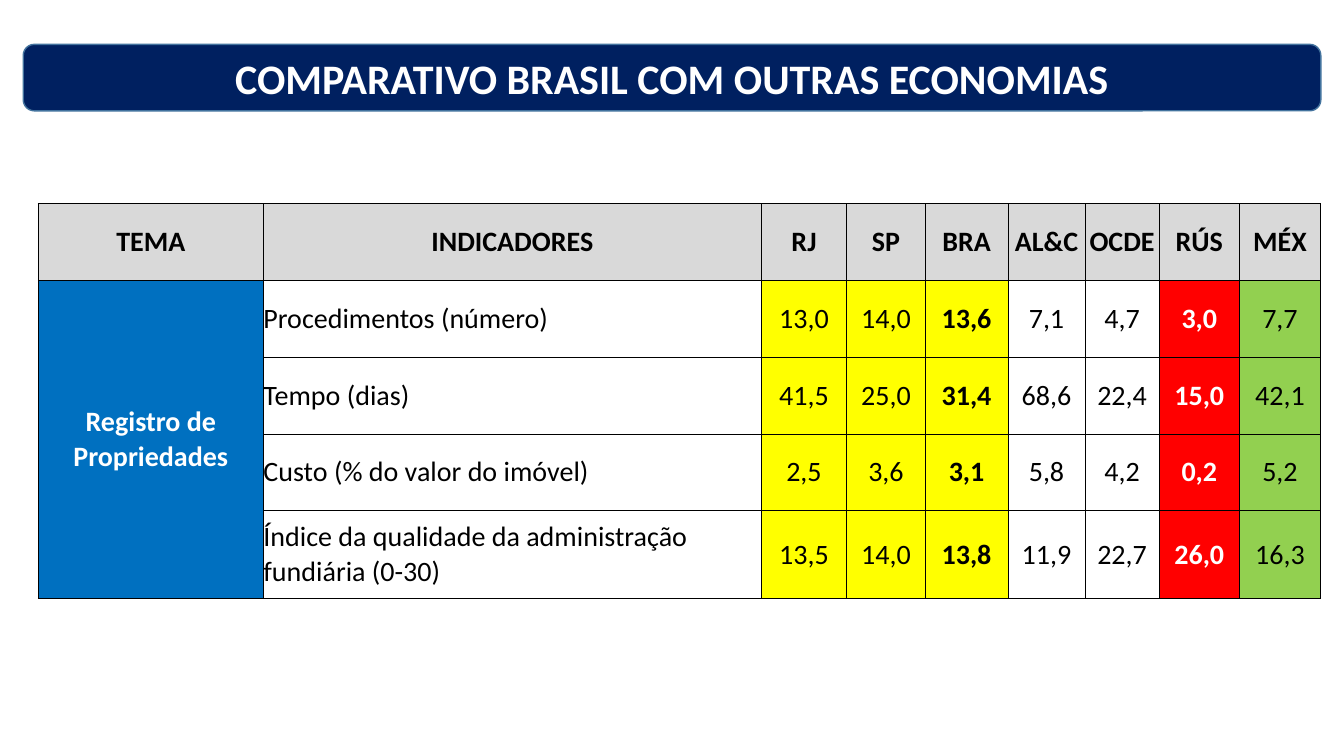
import lxml.etree
import pptx
import pptx.dml.color
import pptx.enum.shapes
import pptx.enum.text
import pptx.oxml.ns
import pptx.util

RGBColor = pptx.dml.color.RGBColor
ALIGN = pptx.enum.text.PP_ALIGN
MIDDLE = pptx.enum.text.MSO_ANCHOR.MIDDLE

BLACK = RGBColor(0x00, 0x00, 0x00)
WHITE = RGBColor(0xFF, 0xFF, 0xFF)
NAVY = RGBColor(0x00, 0x20, 0x60)
STEEL = RGBColor(0x43, 0x73, 0x9E)
GRAY = RGBColor(0xD9, 0xD9, 0xD9)
BLUE = RGBColor(0x00, 0x70, 0xC0)
YELLOW = RGBColor(0xFF, 0xFF, 0x00)
RED = RGBColor(0xFF, 0x00, 0x00)
GREEN = RGBColor(0x92, 0xD0, 0x50)

TITLE = "COMPARATIVO BRASIL COM OUTRAS ECONOMIAS"
THEME = "Registro de Propriedades"
HEADERS = ["TEMA", "INDICADORES", "RJ", "SP", "BRA", "AL&C", "OCDE", "RÚS", "MÉX"]
INDICATORS = [
    ["Procedimentos (número)", "13,0", "14,0", "13,6", "7,1", "4,7", "3,0", "7,7"],
    ["Tempo (dias)", "41,5", "25,0", "31,4", "68,6", "22,4", "15,0", "42,1"],
    ["Custo (% do valor do imóvel)", "2,5", "3,6", "3,1", "5,8", "4,2", "0,2", "5,2"],
    ["Índice da qualidade da administração fundiária (0-30)",
     "13,5", "14,0", "13,8", "11,9", "22,7", "26,0", "16,3"],
]
COLUMN_STYLES = [
    dict(fill=BLUE, color=WHITE, bold=True),
    dict(align=ALIGN.LEFT),
    dict(fill=YELLOW),
    dict(fill=YELLOW),
    dict(fill=YELLOW, bold=True),
    dict(),
    dict(),
    dict(fill=RED, color=WHITE, bold=True),
    dict(fill=GREEN),
]
COLUMN_WIDTHS = [16.75, 37.05, 6.35, 5.85, 6.15, 5.75, 5.5, 6, 6]
ROW_HEIGHTS = [10.15] * 4 + [11.6]


def write(frame, text, size=20, color=BLACK, bold=False, align=ALIGN.CENTER):
    para = frame.paragraphs[0]
    para.alignment = align
    span = para.add_run()
    span.text = text
    span.font.name = "Calibri"
    span.font.size = pptx.util.Pt(size)
    span.font.color.rgb = color
    span.font.bold = bold


class Board:
    def __init__(self, deck):
        self.column = deck.slide_width / 100
        self.row = deck.slide_height / 100
        self.page = deck.slides.add_slide(deck.slide_layouts[5])

    def area(self, left, top, width, height):
        return (round(left * self.column), round(top * self.row),
                round(width * self.column), round(height * self.row))

    def title(self, text, *place):
        area = self.area(*place)
        banner = self.page.shapes.add_shape(
            pptx.enum.shapes.MSO_SHAPE.ROUNDED_RECTANGLE, *area)
        banner.shadow.inherit = False
        banner.fill.solid()
        banner.fill.fore_color.rgb = NAVY
        banner.line.color.rgb = STEEL
        banner.line.width = pptx.util.Pt(1)
        box = self.page.shapes.title
        box.element.addprevious(banner.element)
        box.left, box.top, box.width, box.height = area
        frame = box.text_frame
        frame.word_wrap = True
        frame.auto_size = pptx.enum.text.MSO_AUTO_SIZE.NONE
        frame.vertical_anchor = MIDDLE
        write(frame, text, size=30, color=WHITE, bold=True)

    def borders(self, cell):
        properties = cell._tc.get_or_add_tcPr()
        name = pptx.oxml.ns.qn
        for side in ("a:lnL", "a:lnR", "a:lnT", "a:lnB"):
            line = lxml.etree.SubElement(
                properties, name(side), w=str(pptx.util.Pt(0.5)))
            fill = lxml.etree.SubElement(line, name("a:solidFill"))
            lxml.etree.SubElement(fill, name("a:srgbClr"), val=str(BLACK))

    def cell(self, cell, text, fill=None, **style):
        cell.margin_left = cell.margin_right = 0
        cell.margin_top = cell.margin_bottom = 0
        cell.vertical_anchor = MIDDLE
        self.borders(cell)
        if fill is None:
            cell.fill.background()
        else:
            cell.fill.solid()
            cell.fill.fore_color.rgb = fill
        if text:
            write(cell.text_frame, text, **style)

    def table(self, left, top):
        place = self.area(left, top, sum(COLUMN_WIDTHS), sum(ROW_HEIGHTS))
        table = self.page.shapes.add_table(
            len(ROW_HEIGHTS), len(COLUMN_WIDTHS), *place).table
        table.first_row = table.horz_banding = False
        for column, width in zip(table.columns, COLUMN_WIDTHS):
            column.width = round(width * self.column)
        for row, height in zip(table.rows, ROW_HEIGHTS):
            row.height = round(height * self.row)
        table.cell(1, 0).merge(table.cell(len(INDICATORS), 0))
        for index, header in enumerate(HEADERS):
            self.cell(table.cell(0, index), header, fill=GRAY, bold=True)
        for number, values in enumerate(INDICATORS, 1):
            theme = THEME if number == 1 else ""
            for index, text in enumerate([theme] + values):
                self.cell(table.cell(number, index), text, **COLUMN_STYLES[index])


def main():
    deck = pptx.Presentation()
    deck.slide_width = pptx.util.Inches(13.33)
    deck.slide_height = pptx.util.Inches(7.5)
    board = Board(deck)
    board.title(TITLE, 1.73, 5.87, 96.55, 8.8)
    board.table(2.85, 26.95)
    deck.save("out.pptx")


if __name__ == "__main__":
    main()
